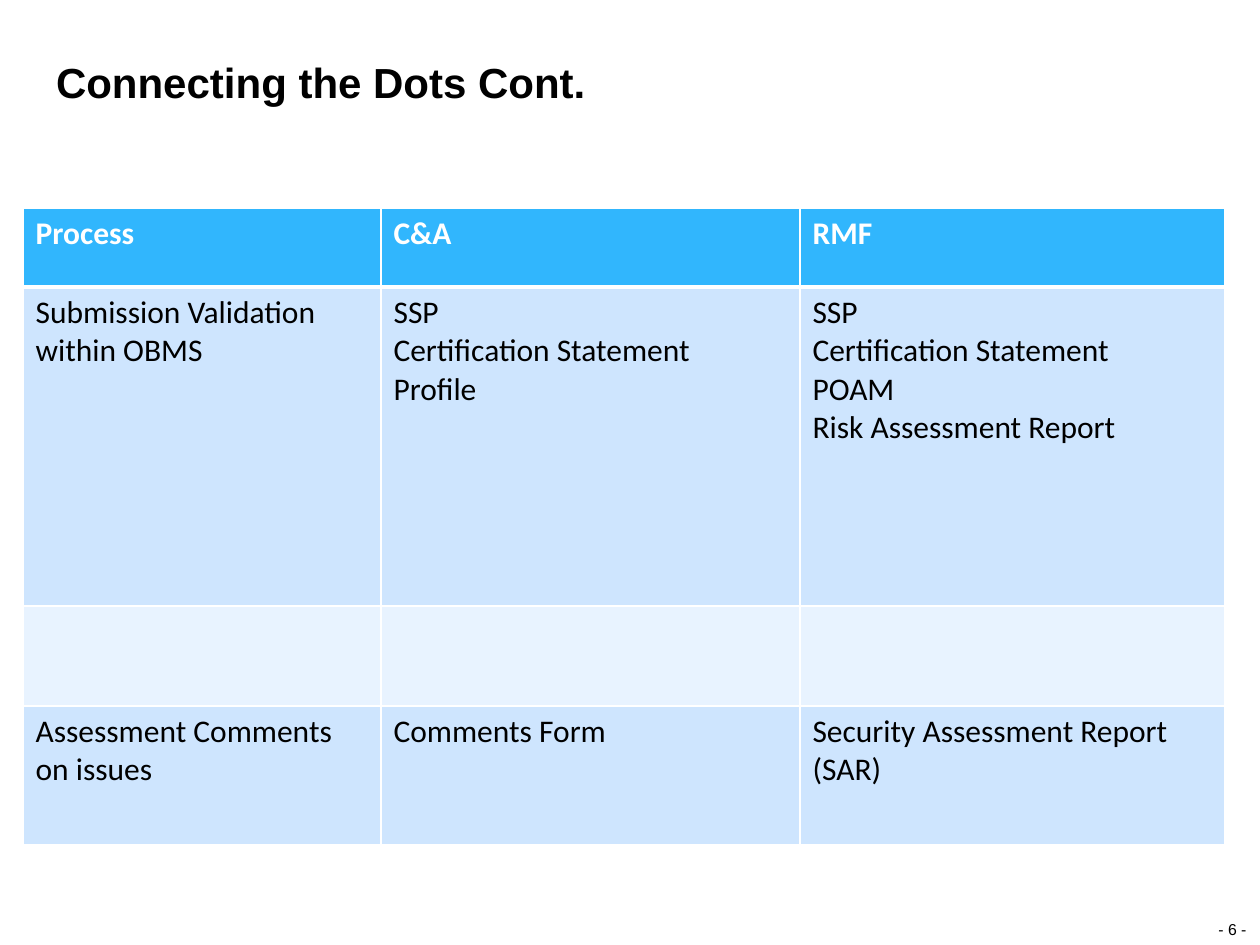
from lxml.etree import SubElement
from pptx import Presentation
from pptx.dml.color import RGBColor
from pptx.enum.text import MSO_ANCHOR as Anchor, MSO_AUTO_SIZE as AutoSize, PP_ALIGN as Align
from pptx.oxml import parse_xml
from pptx.oxml.ns import nsdecls, qn
from pptx.util import Emu, Pt

PX_PER_INCH = 126
COLORS = {
    "text": "000000",
    "white": "FFFFFF",
    "header": "31B6FD",
    "band_dark": "CEE5FE",
    "band_light": "E8F3FF",
}


def px(length):
    return Emu(round(length * 914400 / PX_PER_INCH))


def color(name):
    return RGBColor.from_string(COLORS[name])


def write_text(frame, text, size=18, font="Calibri", ink="text", bold=False,
               align=Align.LEFT, spacing=None):
    """Write each line of text as one formatted paragraph."""
    for index, line in enumerate(text.split("\n")):
        paragraph = frame.add_paragraph() if index else frame.paragraphs[0]
        paragraph.alignment = align
        if spacing:
            paragraph.line_spacing = spacing
        run = paragraph.add_run()
        run.text = line
        run.font.size = Pt(size)
        run.font.name = font
        run.font.bold = bold
        run.font.color.rgb = color(ink)


class SlideBuilder:
    heading_font = "Arial"
    heading_spacing = 1.06

    def __init__(self, slide):
        self.slide = slide

    def place(self, shape, left, top, width, height):
        shape.left, shape.top = px(left), px(top)
        shape.width, shape.height = px(width), px(height)

    def heading_text(self, frame, text, wrap, **style):
        frame.margin_left = frame.margin_right = 0
        frame.margin_top = frame.margin_bottom = 0
        frame.vertical_anchor = Anchor.BOTTOM
        frame.auto_size = AutoSize.NONE
        frame.word_wrap = wrap
        write_text(frame, text, font=self.heading_font,
                   spacing=self.heading_spacing, **style)

    def title(self, text, *box):
        title = self.slide.shapes.title
        self.place(title, *box)
        self.heading_text(title.text_frame, text, wrap=True, size=24, bold=True)

    def page_number(self, text, *box):
        number = self.slide.shapes.add_textbox(*map(px, box))
        self.heading_text(number.text_frame, text, wrap=False, size=9,
                          align=Align.CENTER)

    def borders(self, cell, **widths):
        """Add white borders ahead of the fill, in schema order."""
        properties = cell._tc.get_or_add_tcPr()
        for index, side in enumerate("LRTB"):
            line = parse_xml(f'<a:ln{side} {nsdecls("a")} w="{Pt(widths.get(side, 1))}"/>')
            fill = SubElement(line, qn("a:solidFill"))
            SubElement(fill, qn("a:srgbClr"), val=COLORS["white"])
            properties.insert(index, line)

    def table(self, rows, left, top, column_widths, row_heights):
        table = self.slide.shapes.add_table(
            len(rows), len(column_widths), px(left), px(top),
            px(sum(column_widths)), px(sum(row_heights))).table
        for column, width in zip(table.columns, column_widths):
            column.width = px(width)
        for row, height in zip(table.rows, row_heights):
            row.height = px(height)

        for r, texts in enumerate(rows):
            is_header = r == 0
            band = "header" if is_header else "band_dark" if r % 2 else "band_light"
            edges = {"B": 3} if is_header else {"T": 3} if r == 1 else {}
            for c, text in enumerate(texts):
                cell = table.cell(r, c)
                cell.fill.solid()
                cell.fill.fore_color.rgb = color(band)
                self.borders(cell, **edges)
                if text:
                    write_text(cell.text_frame, text, bold=is_header,
                               ink="white" if is_header else "text")


def main():
    deck = Presentation()
    deck.slide_width, deck.slide_height = px(1260), px(945)
    title_only = deck.slide_layouts[5]
    builder = SlideBuilder(deck.slides.add_slide(title_only))

    # Heading
    builder.title("Connecting the Dots Cont.", 56, 53, 887, 54)

    # Process comparison
    process_rows = [
        ("Process", "C&A", "RMF"),
        ("Submission Validation within OBMS",
         "SSP\nCertification Statement\nProfile",
         "SSP\nCertification Statement\nPOAM\nRisk Assessment Report"),
        ("", "", ""),
        ("Assessment Comments on issues", "Comments Form",
         "Security Assessment Report (SAR)"),
    ]
    builder.table(process_rows, 23, 208, column_widths=(358, 419, 425),
                  row_heights=(79, 319, 100, 139))

    # Footer
    builder.page_number("- 6 -", 1213, 919, 39, 20)

    deck.save("out.pptx")


if __name__ == "__main__":
    main()
